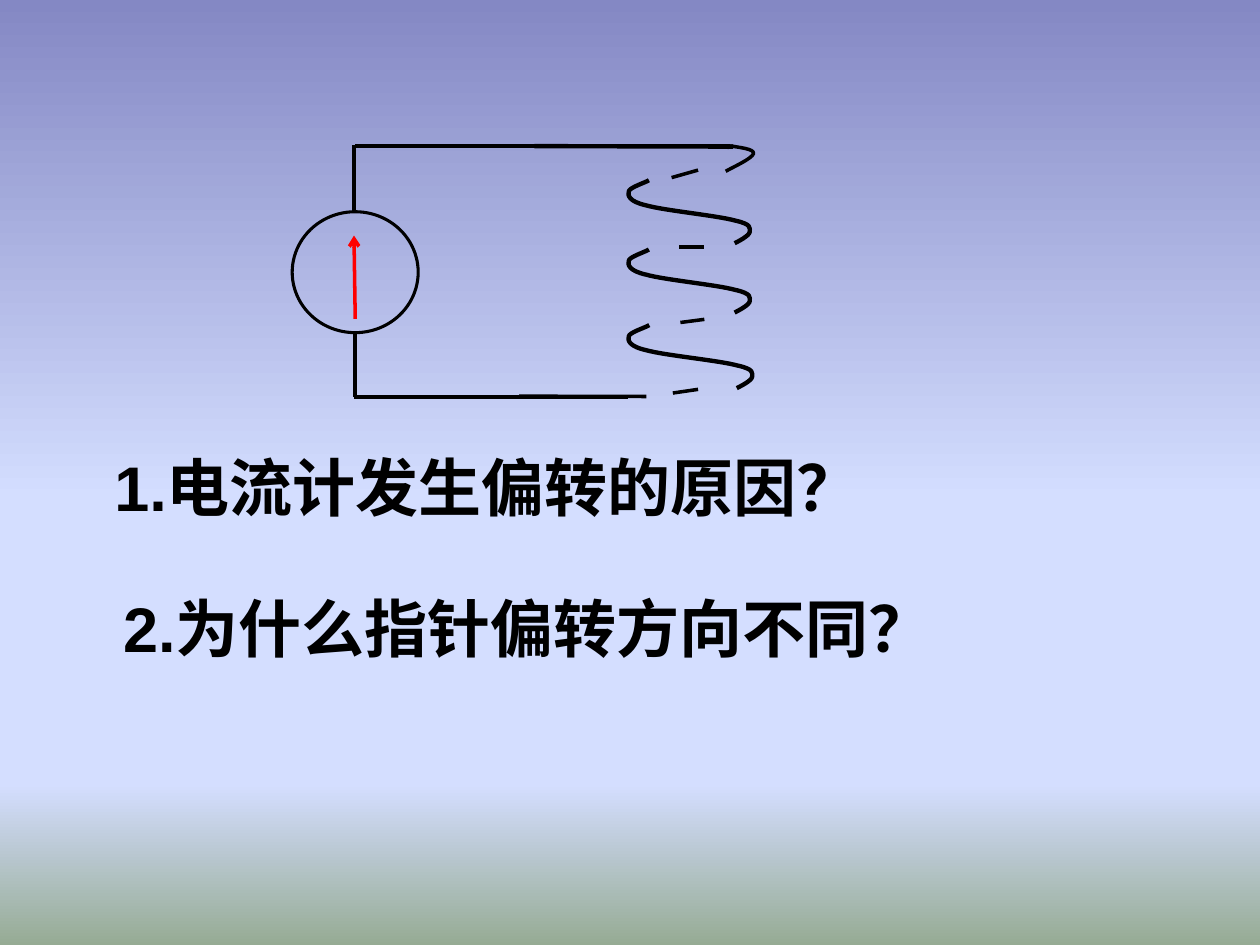
from lxml import etree
from pptx import Presentation
from pptx import util as u
from pptx.dml.color import RGBColor
from pptx.enum import shapes, text
from pptx.oxml.ns import qn

BLACK, RED = "000000", "FF0000"
SKY = [(0, "8488C4"), (53, "D4DEFF"), (83, "D4DEFF"), (100, "96AB94")]
QUESTIONS = [
    ("1.电流计发生偏转的原因？", (58.3, 252.7, 442, 51.1), 7.2, False),
    ("2.为什么指针偏转方向不同？", (33.1, 333.4, 610.6, 51.1), 37.2, True),
]
METER = (167, 121, 72, 69.1)
WIRES = [
    ((202.3, 82.8), (202.3, 121), 2.25),
    ((203, 190.1), (203, 226.8), 2.25),
    ((203, 83.5), (416.9, 83.5), 2.25),
    ((202.3, 226.8), (358.6, 226.8), 2.25),
    ((296.6, 226.4), (369.4, 226.6), 2),
    ((419, 83.8), (305.3, 83.5), 2.5),
]
HIDDEN_TURNS = [
    ((383.8, 101.5), (398.9, 97.2)),
    ((388.1, 141.1), (402.5, 141.1)),
    ((388.8, 184.3), (402.5, 182.5)),
    ((384.5, 224.6), (398.9, 222.5)),
]
NEEDLE = ((203, 182.2), (202.3, 134.6))
COIL_END = [
    (414.7, 97.9), (418.3, 95.8), (429.8, 90.7), (430.6, 87.8),
    (431.3, 85), (421.2, 84.2), (418.3, 83.5),
    (415.4, 83.5), (416.9, 84.2), (416.9, 85),
]
TURN = [
    (61.2, 36), (62.6, 35.3), (69.8, 31.7), (69.8, 29.5),
    (69.8, 27.4), (71.3, 25.2), (61.2, 23),
    (51.1, 20.2), (20.9, 17.3), (10.8, 14.4),
    (0.7, 12.2), (0, 8.6), (0.7, 6.5),
    (0.7, 4.3), (10.1, 1.4), (12.2, 0),
]
TURN_LEFT = 358.6
TURNS = [(103, 1), (142.6, 1), (185.8, 1.02)]


def color(value):
    return RGBColor.from_string(value)


def set_line(shape, width, value=BLACK):
    shape.line.width = u.Pt(width)
    shape.line.color.rgb = color(value)


def add_background(slide):
    fill = slide.background.fill
    fill.gradient()
    fill.gradient_angle = 270
    stops = slide.element.find(".//" + qn("a:gsLst"))
    for stop in list(stops):
        stops.remove(stop)
    for percent, value in SKY:
        stop = etree.SubElement(stops, qn("a:gs"), pos=str(percent * 1000))
        etree.SubElement(stop, qn("a:srgbClr"), val=value)


def add_text(slide, words, frame, *, indent=7.2, wrap=True, size=36, value=BLACK):
    box = slide.shapes.add_textbox(*map(u.Pt, frame))
    body = box.text_frame
    body.word_wrap = wrap
    body.auto_size = text.MSO_AUTO_SIZE.SHAPE_TO_FIT_TEXT
    body.margin_left = u.Pt(indent)
    span = body.paragraphs[0].add_run()
    span.text = words
    span.font.name = "Arial"
    span.font.size = u.Pt(size)
    span.font.bold = True
    span.font.color.rgb = color(value)


def add_line(slide, start, end, width, value=BLACK):
    line = slide.shapes.add_connector(
        shapes.MSO_CONNECTOR.STRAIGHT, *map(u.Pt, start + end))
    set_line(line, width, value)
    etree.SubElement(line.element.spPr, qn("a:effectLst"))
    return line


def add_curve(slide, points, width):
    points = [(u.Pt(x), u.Pt(y)) for x, y in points]
    builder = slide.shapes.build_freeform(*points[0], scale=1.0)
    builder.add_line_segments(points[1:], close=False)
    curve = builder.convert_to_shape()
    segments = list(curve.element.iter(qn("a:lnTo")))
    for first in range(0, len(segments), 3):
        trio = segments[first:first + 3]
        bezier = etree.Element(qn("a:cubicBezTo"))
        trio[0].addprevious(bezier)
        for segment in trio:
            bezier.append(segment[0])
            segment.getparent().remove(segment)
    curve.fill.background()
    curve.shadow.inherit = False
    set_line(curve, width)


def add_circuit(slide):
    meter = slide.shapes.add_shape(
        shapes.MSO_SHAPE.OVAL, *map(u.Pt, METER))
    meter.fill.background()
    meter.shadow.inherit = False
    set_line(meter, 1.75)
    for start, end, width in WIRES:
        add_line(slide, start, end, width)
    for start, end in HIDDEN_TURNS:
        add_line(slide, start, end, 2)
    needle = add_line(slide, *NEEDLE, 2, RED)
    etree.SubElement(needle.get_or_add_ln(), qn("a:tailEnd"), type="arrow")
    add_curve(slide, COIL_END, 2)
    for top, stretch in TURNS:
        points = [(TURN_LEFT + x * stretch, top + y) for x, y in TURN]
        add_curve(slide, points, 2.5)


def main():
    deck = Presentation()
    deck.slide_width, deck.slide_height = u.Pt(720), u.Pt(540)
    slide = deck.slides.add_slide(deck.slide_layouts[6])
    add_background(slide)
    for words, frame, indent, wrap in QUESTIONS:
        add_text(slide, words, frame, indent=indent, wrap=wrap)
    add_circuit(slide)
    deck.save("out.pptx")


if __name__ == "__main__":
    main()
